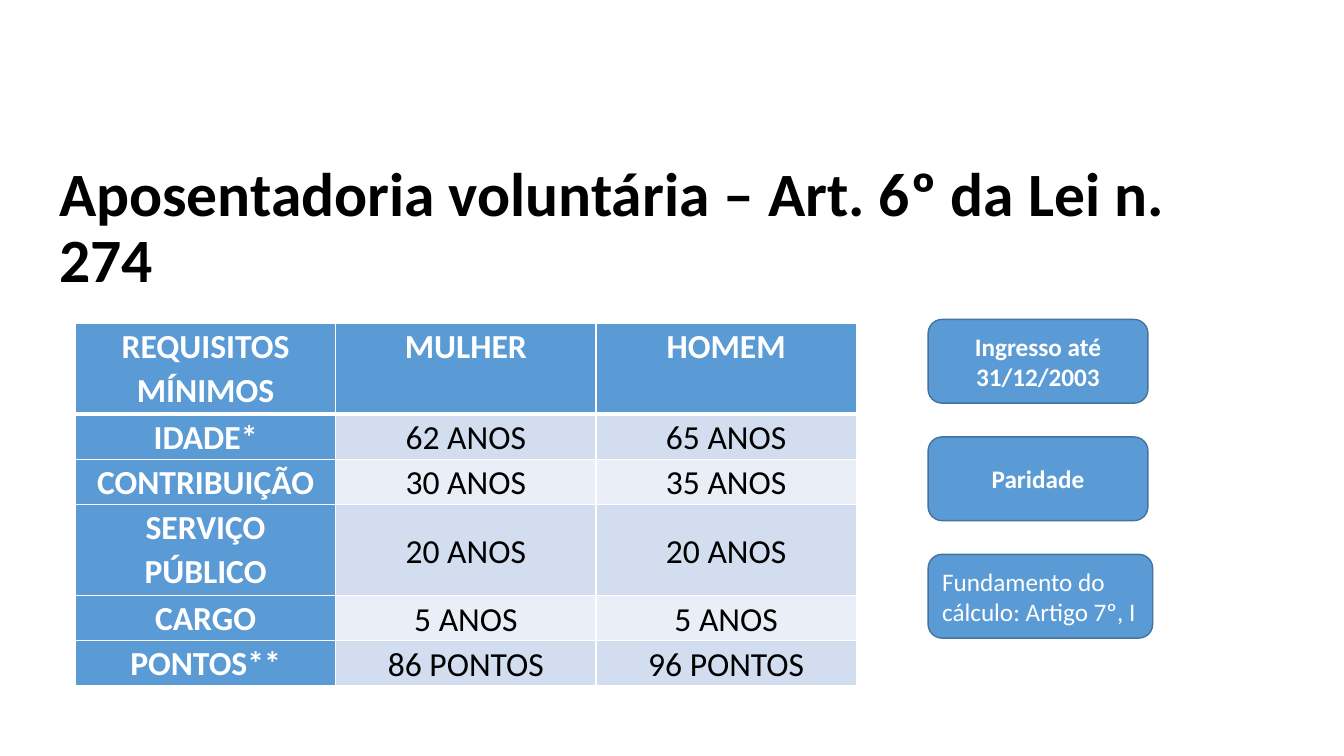
"""Build the slide on voluntary retirement requirements."""
import dataclasses

import lxml.etree
import pptx
import pptx.dml.color
import pptx.enum.shapes
import pptx.enum.text
import pptx.oxml.ns
import pptx.util

Cm = pptx.util.Cm
Pt = pptx.util.Pt
RGB = pptx.dml.color.RGBColor
Align = pptx.enum.text.PP_ALIGN
Anchor = pptx.enum.text.MSO_ANCHOR
qn = pptx.oxml.ns.qn


@dataclasses.dataclass(frozen=True)
class Theme:
    """Colours, font and type sizes."""
    font: str = "Calibri"
    black: str = "000000"
    white: str = "FFFFFF"
    blue: str = "5B9BD5"
    outline: str = "43739E"
    bands: tuple[str, str] = ("D2DEEF", "EAEFF7")
    title: int = 44
    table: int = 24
    card: int = 18


@dataclasses.dataclass(frozen=True)
class Requirement:
    """A table row: name, values for women and men, height in cm."""
    name: str
    woman: str
    man: str
    height: float = 1.14


@dataclasses.dataclass(frozen=True)
class Card:
    """A rounded box beside the table, with its width in cm."""
    text: str
    width: float = 5.54
    bold: bool = True
    align: Align = Align.CENTER


THEME = Theme()
TITLE = "Aposentadoria voluntária – Art. 6º da Lei n. 274"
REQUIREMENTS = [
    Requirement("REQUISITOS MÍNIMOS", "MULHER", "HOMEM", 2.29),
    Requirement("IDADE*", "62 ANOS", "65 ANOS"),
    Requirement("CONTRIBUIÇÃO", "30 ANOS", "35 ANOS"),
    Requirement("SERVIÇO PÚBLICO", "20 ANOS", "20 ANOS", 2.29),
    Requirement("CARGO", "5 ANOS", "5 ANOS"),
    Requirement("PONTOS**", "86 PONTOS", "96 PONTOS"),
]
CARDS = [
    Card("Ingresso até 31/12/2003"),
    Card("Paridade"),
    Card("Fundamento do cálculo: Artigo 7º, I", 5.66, False, Align.LEFT),
]
COLUMN_WIDTH = 6.56
CARD_PITCH = 2.96


def write(tf, text: str, size: int, color: str, bold: bool,
          align: Align, spacing: float = 1.0) -> None:
    """Fill a text frame with one styled paragraph."""
    tf.word_wrap = True
    p = tf.paragraphs[0]
    p.text = text
    p.alignment = align
    p.line_spacing = spacing
    p.font.name = THEME.font
    p.font.size = Pt(size)
    p.font.bold = bold
    p.font.color.rgb = RGB.from_string(color)


def add_title(s) -> None:
    """Add the heading."""
    tf = s.shapes.add_textbox(Cm(1.24), Cm(4.37), Cm(30.3), Cm(2.82)).text_frame
    tf.vertical_anchor = Anchor.MIDDLE
    write(tf, TITLE, THEME.title, THEME.black, True, Align.LEFT, 0.9)


def set_border(cell, side: str, width: int) -> None:
    """Draw one white cell border, width in points."""
    tc_pr = cell._tc.get_or_add_tcPr()
    ln = lxml.etree.SubElement(tc_pr, qn(f"a:ln{side}"), w=str(Pt(width)))
    fill = lxml.etree.SubElement(ln, qn("a:solidFill"))
    lxml.etree.SubElement(fill, qn("a:srgbClr"), val=THEME.white)


def add_requirements(s) -> None:
    """Add the table of minimum requirements."""
    height = sum(req.height for req in REQUIREMENTS)
    table = s.shapes.add_table(len(REQUIREMENTS), 3, Cm(1.9), Cm(8.15),
                               Cm(3 * COLUMN_WIDTH), Cm(height)).table
    for column in table.columns:
        column.width = Cm(COLUMN_WIDTH)
    for i, req in enumerate(REQUIREMENTS):
        table.rows[i].height = Cm(req.height)
        for j, text in enumerate((req.name, req.woman, req.man)):
            cell = table.cell(i, j)
            heading = i == 0 or j == 0
            cell.margin_left = cell.margin_right = Cm(0.18)
            cell.margin_top = cell.margin_bottom = 0
            cell.vertical_anchor = Anchor.TOP if heading else Anchor.MIDDLE
            for side in "LRTB":
                thick = (i, side) in ((0, "B"), (1, "T"))
                set_border(cell, side, 3 if thick else 1)
            fill = THEME.blue if heading else THEME.bands[(i - 1) % 2]
            cell.fill.solid()
            cell.fill.fore_color.rgb = RGB.from_string(fill)
            color = THEME.white if heading else THEME.black
            write(cell.text_frame, text, THEME.table, color, heading,
                  Align.CENTER, 1.07)


def add_card(s, card: Card, top: float) -> None:
    """Add one rounded box at the given top in cm."""
    sp = s.shapes.add_shape(pptx.enum.shapes.MSO_SHAPE.ROUNDED_RECTANGLE,
                            Cm(23.39), Cm(top), Cm(card.width), Cm(2.11))
    sp.shadow.inherit = False
    sp.fill.solid()
    sp.fill.fore_color.rgb = RGB.from_string(THEME.blue)
    sp.line.color.rgb = RGB.from_string(THEME.outline)
    sp.line.width = Pt(1)
    sp.text_frame.vertical_anchor = Anchor.MIDDLE
    write(sp.text_frame, card.text, THEME.card, THEME.white, card.bold, card.align)


def main() -> None:
    """Build and save the presentation."""
    prs = pptx.Presentation()
    prs.slide_width, prs.slide_height = Cm(33.87), Cm(19.05)
    s = prs.slides.add_slide(prs.slide_layouts[6])
    add_title(s)
    add_requirements(s)
    for i, card in enumerate(CARDS):
        add_card(s, card, 8.05 + i * CARD_PITCH)
    prs.save("out.pptx")


if __name__ == "__main__":
    main()
